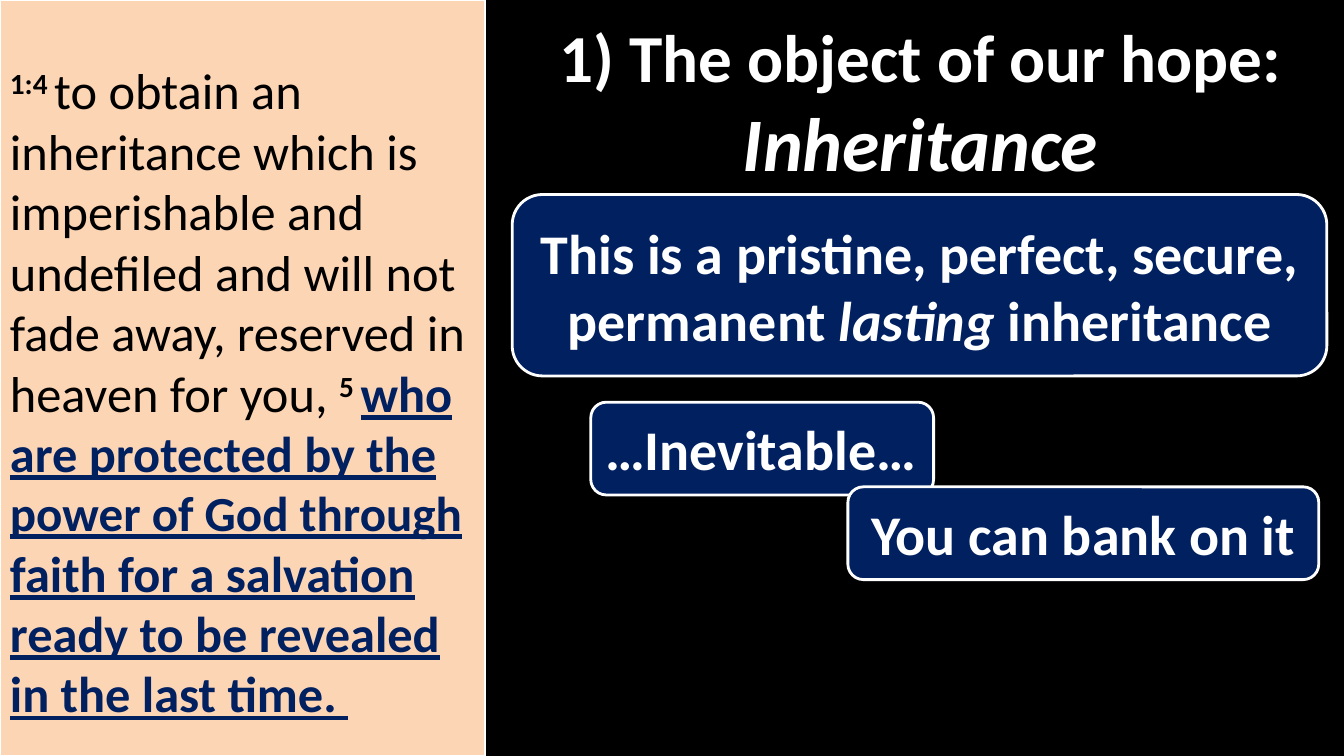
from dataclasses import dataclass, field
from typing import Any

from pptx import Presentation
from pptx.dml.color import RGBColor
from pptx.enum import shapes, text
from pptx.util import Inches, Pt

WHITE, BLACK, NAVY, PEACH = "FFFFFF", "000000", "002060", "FCD5B5"
ROUNDED = shapes.MSO_SHAPE.ROUNDED_RECTANGLE
CENTER, LEFT = text.PP_ALIGN.CENTER, text.PP_ALIGN.LEFT


@dataclass
class Phrase:
    words: str
    size: float
    color: str = WHITE
    superscript: bool = False
    style: dict[str, Any] = field(default_factory=dict)


@dataclass
class Panel:
    left: float
    top: float
    width: float
    height: float
    phrases: list[Phrase]
    fill: str | None = NAVY
    line_width: float = 2
    outline: shapes.MSO_SHAPE = ROUNDED
    align: text.PP_ALIGN = CENTER
    anchor: text.MSO_ANCHOR = text.MSO_ANCHOR.MIDDLE
    top_inset: float = 0.05


BOLD = {"bold": True}
BOLD_ITALIC = {"bold": True, "italic": True}
KEY_VERSE = {"bold": True, "underline": True}

HEADING = Panel(5.17, 0.17, 7.92, 1.67, [
    Phrase("1) The object of our hope: ", 48, style=BOLD),
    Phrase("Inheritance", 54, style=BOLD_ITALIC),
], fill=None)

SCRIPTURE = Panel(0, 0, 4.81, 7.5, [
    Phrase("1:4 ", 36, BLACK, True, BOLD),
    Phrase("to obtain an ", 36, BLACK),
    Phrase("inheritance which is imperishable and undefiled and will not "
           "fade away, reserved in heaven for you, ", 36, BLACK),
    Phrase("5 ", 36, BLACK, True, BOLD),
    Phrase("who are protected by the ", 36, NAVY, style=KEY_VERSE),
    Phrase("power of God through ", 35, NAVY, style=KEY_VERSE),
    Phrase("faith for a salvation ready to be revealed in the last time. ",
           36, NAVY, style=KEY_VERSE),
], fill=PEACH, line_width=1.5, outline=shapes.MSO_SHAPE.RECTANGLE,
    align=LEFT, anchor=text.MSO_ANCHOR.TOP, top_inset=0.59)

CLAIMS = [
    Panel(5.08, 1.93, 8.08, 1.8, [
        Phrase("This is a pristine, perfect, secure, permanent ", 40, style=BOLD),
        Phrase("lasting", 40, style=BOLD_ITALIC),
        Phrase(" inheritance", 40, style=BOLD),
    ]),
    Panel(5.86, 3.99, 3.4, 0.92, [Phrase("…Inevitable…", 40, style=BOLD)], align=LEFT),
    Panel(8.41, 4.83, 4.67, 0.92, [Phrase("You can bank on it", 40, style=BOLD)]),
]


def paint(color_format, color: str) -> None:
    color_format.rgb = RGBColor.from_string(color)


def add_phrase(paragraph, phrase: Phrase) -> None:
    run = paragraph.add_run()
    run.text = phrase.words
    font_values = {"name": "Calibri", "size": Pt(phrase.size), "bold": False} | phrase.style
    for attribute, value in font_values.items():
        setattr(run.font, attribute, value)
    paint(run.font.color, phrase.color)
    if phrase.superscript:
        run._r.get_or_add_rPr().set("baseline", "30000")


def add_panel(slide, panel: Panel) -> None:
    bounds = map(Inches, (panel.left, panel.top, panel.width, panel.height))
    box = slide.shapes.add_shape(panel.outline, *bounds)
    box.shadow.inherit = False
    if panel.fill is None:
        box.fill.background()
        box.line.fill.background()
    else:
        box.fill.solid()
        paint(box.fill.fore_color, panel.fill)
        paint(box.line.color, WHITE)
        box.line.width = Pt(panel.line_width)

    frame_values = {"word_wrap": True, "vertical_anchor": panel.anchor,
                    "margin_top": Inches(panel.top_inset)}
    for attribute, value in frame_values.items():
        setattr(box.text_frame, attribute, value)
    paragraph = box.text_frame.paragraphs[0]
    paragraph.alignment = panel.align
    for phrase in panel.phrases:
        add_phrase(paragraph, phrase)


def main() -> None:
    deck = Presentation()
    deck.slide_width, deck.slide_height = Inches(13.33), Inches(7.5)
    slide = deck.slides.add_slide(deck.slide_layouts[6])
    slide.background.fill.solid()
    paint(slide.background.fill.fore_color, BLACK)
    for panel in (HEADING, SCRIPTURE, *CLAIMS):
        add_panel(slide, panel)
    deck.save("out.pptx")


if __name__ == "__main__":
    main()
